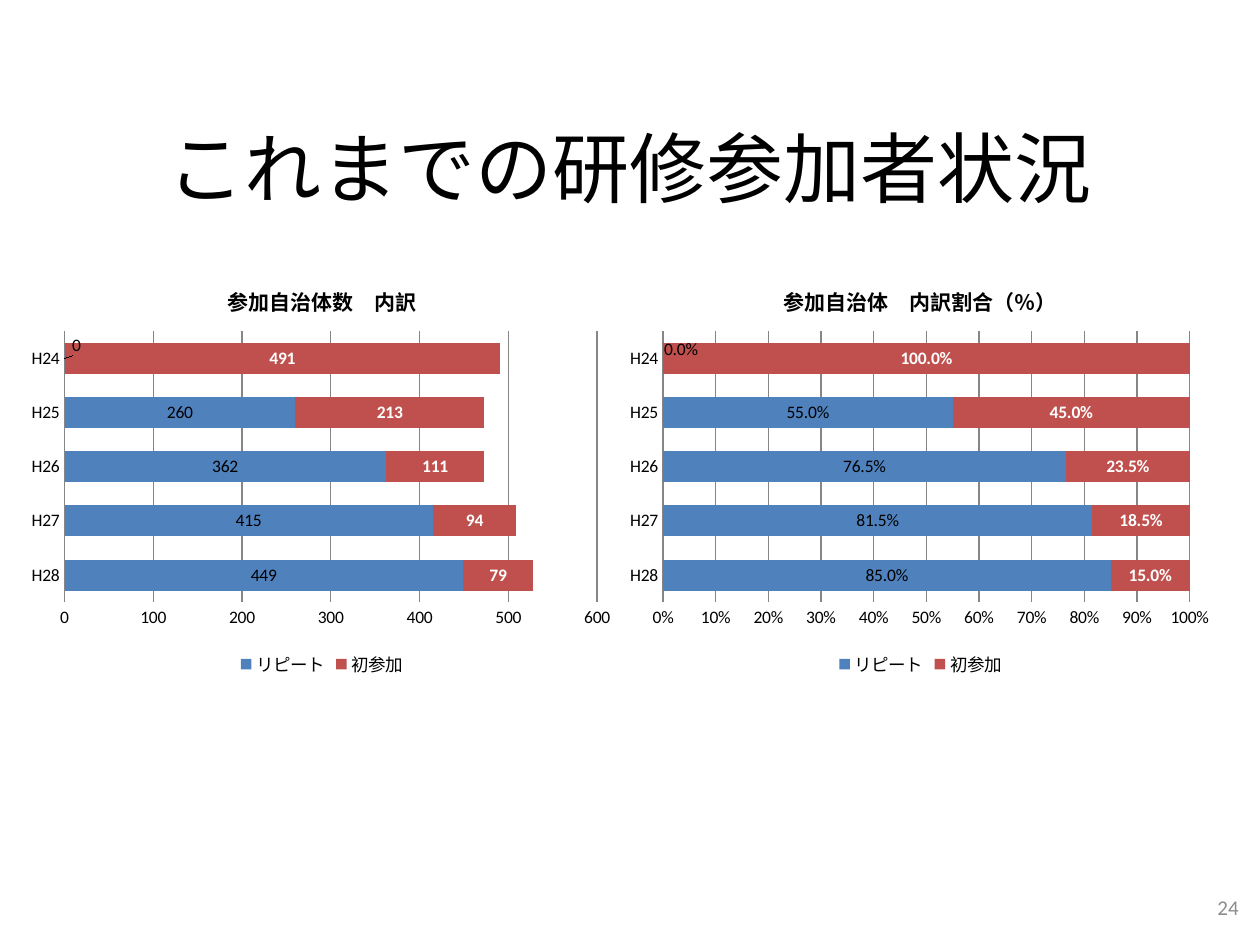
"""Build the slide on training participation with two stacked bar charts."""
from lxml import etree
from pptx import Presentation
from pptx.chart.data import CategoryChartData
from pptx.dml.color import RGBColor
from pptx.enum.chart import (XL_CHART_TYPE, XL_LABEL_POSITION,
                             XL_LEGEND_POSITION, XL_TICK_MARK)
from pptx.enum.text import MSO_ANCHOR, PP_ALIGN
from pptx.oxml.ns import qn
from pptx.util import Inches, Pt

STACKED, STACKED_100 = XL_CHART_TYPE.BAR_STACKED, XL_CHART_TYPE.BAR_STACKED_100
LABEL_CENTER = XL_LABEL_POSITION.CENTER
LEGEND_BOTTOM = XL_LEGEND_POSITION.BOTTOM
NO_TICK = XL_TICK_MARK.NONE
MIDDLE = MSO_ANCHOR.MIDDLE
CENTER, RIGHT = PP_ALIGN.CENTER, PP_ALIGN.RIGHT

FONT = "Calibri"
BLACK = RGBColor(0x00, 0x00, 0x00)
WHITE = RGBColor(0xFF, 0xFF, 0xFF)
GRAY = RGBColor(0x8C, 0x8C, 0x8C)
GRID = RGBColor(0x86, 0x86, 0x86)
BLUE = RGBColor(0x4F, 0x81, 0xBD)
RED = RGBColor(0xC0, 0x50, 0x4D)

TITLE = "これまでの研修参加者状況"
PAGE_NUMBER = "24"
YEARS = ["H28", "H27", "H26", "H25", "H24"]
SERIES_STYLES = [("リピート", BLUE, BLACK, False), ("初参加", RED, WHITE, True)]
CHARTS = [
    {"title": "参加自治体数　内訳", "kind": STACKED,
     "values": [[449, 415, 362, 260, 0], [79, 94, 111, 213, 491]],
     "label_format": "General", "axis_format": "General",
     "maximum": 600, "step": 100,
     "plot": (0.07, 0.16, 0.89, 0.65), "zero_shift": (0.02, -0.03)},
    {"title": "参加自治体　内訳割合（％）", "kind": STACKED_100,
     "values": [[0.85, 0.815, 0.765, 0.55, 0], [0.15, 0.185, 0.235, 0.45, 1]],
     "label_format": "0.0%", "axis_format": "0%",
     "maximum": 1, "step": 0.1,
     "plot": (0.07, 0.16, 0.88, 0.65), "zero_shift": (0.03, -0.02)},
]
CHART_LEFT, CHART_TOP, CHART_WIDTH, CHART_HEIGHT = 0.18, 2.1, 4.75, 3.31


def style_font(font, size=10, color=BLACK, bold=False):
    """Apply the slide's typeface with the given format."""
    font.name, font.size, font.bold = FONT, Pt(size), bold
    font.color.rgb = color


def add_text(page, text, left, top, width, height, size, color, align):
    """Add one vertically centred line of text."""
    frame = page.shapes.add_textbox(Inches(left), Inches(top),
                                    Inches(width), Inches(height)).text_frame
    frame.word_wrap = True
    frame.vertical_anchor = MIDDLE
    para = frame.paragraphs[0]
    para.alignment = align
    span = para.add_run()
    span.text = text
    style_font(span.font, size=size, color=color)


def make_layout(**settings):
    """Return a manual chart layout element."""
    layout = etree.Element(qn("c:layout"))
    manual = etree.SubElement(layout, qn("c:manualLayout"))
    for name, value in settings.items():
        etree.SubElement(manual, qn(f"c:{name}")).set("val", str(value))
    return layout


def style_series(series, style, label_format):
    """Colour a series and its value labels."""
    _, fill, label_color, bold = style
    series.format.fill.solid()
    series.format.fill.fore_color.rgb = fill
    labels = series.data_labels
    labels.show_value = True
    labels.position = LABEL_CENTER
    labels.number_format = label_format
    labels.number_format_is_linked = False
    style_font(labels.font, color=label_color, bold=bold)


def shift_label(series, index, shift, label_format):
    """Move one value label by fractions of the chart size."""
    label = series.points[index].data_label
    label.position = LABEL_CENTER
    style_font(label.font)
    element = series.data_labels._element.find(qn("c:dLbl"))
    number_format = etree.Element(qn("c:numFmt"), formatCode=label_format,
                                  sourceLinked="0")
    element.insert(1, make_layout(x=shift[0], y=shift[1]))
    element.insert(2, number_format)


def style_axes(chart, content):
    """Set scale, ticks and grid lines."""
    categories, values = chart.category_axis, chart.value_axis
    for axis in (categories, values):
        axis.major_tick_mark = axis.minor_tick_mark = NO_TICK
        style_font(axis.tick_labels.font)
    categories.format.line.color.rgb = GRID
    values.format.line.fill.background()
    values.has_major_gridlines = True
    values.major_gridlines.format.line.color.rgb = GRID
    values.minimum_scale, values.maximum_scale = 0, content["maximum"]
    values.major_unit = content["step"]
    values.tick_labels.number_format = content["axis_format"]
    values.tick_labels.number_format_is_linked = False


def add_bar_chart(page, content, left):
    """Add one stacked bar chart."""
    data = CategoryChartData()
    data.categories = YEARS
    for style, values in zip(SERIES_STYLES, content["values"]):
        data.add_series(style[0], values)
    chart = page.shapes.add_chart(
        content["kind"], Inches(left), Inches(CHART_TOP),
        Inches(CHART_WIDTH), Inches(CHART_HEIGHT), data).chart
    style_font(chart.font)

    chart.has_title = True
    chart.chart_title.include_in_layout = False
    span = chart.chart_title.text_frame.paragraphs[0].add_run()
    span.text = content["title"]
    style_font(span.font, size=12, bold=True)

    chart.has_legend = True
    chart.legend.position = LEGEND_BOTTOM
    chart.legend.include_in_layout = False
    style_font(chart.legend.font)

    plot = chart.plots[0]
    plot.gap_width, plot.overlap = 75, 100
    plot.vary_by_categories = False
    for series, style in zip(plot.series, SERIES_STYLES):
        style_series(series, style, content["label_format"])
    shift_label(plot.series[0], YEARS.index("H24"), content["zero_shift"],
                content["label_format"])
    style_axes(chart, content)

    area = chart._chartSpace.find(".//" + qn("c:plotArea"))
    for old in area.findall(qn("c:layout")):
        area.remove(old)
    x, y, width, height = content["plot"]
    area.insert(0, make_layout(layoutTarget="inner", xMode="edge", yMode="edge",
                               x=x, y=y, w=width, h=height))


def main():
    """Assemble and save the deck."""
    deck = Presentation()
    deck.slide_width, deck.slide_height = Inches(10), Inches(7.5)
    page = deck.slides.add_slide(deck.slide_layouts[6])
    add_text(page, TITLE, 0.5, 0.7, 9, 1.25, size=44, color=BLACK, align=CENTER)
    for index, content in enumerate(CHARTS):
        add_bar_chart(page, content, CHART_LEFT + index * CHART_WIDTH)
    add_text(page, PAGE_NUMBER, 7.6, 7, 2.33, 0.4, size=12, color=GRAY, align=RIGHT)
    deck.save("out.pptx")


if __name__ == "__main__":
    main()
